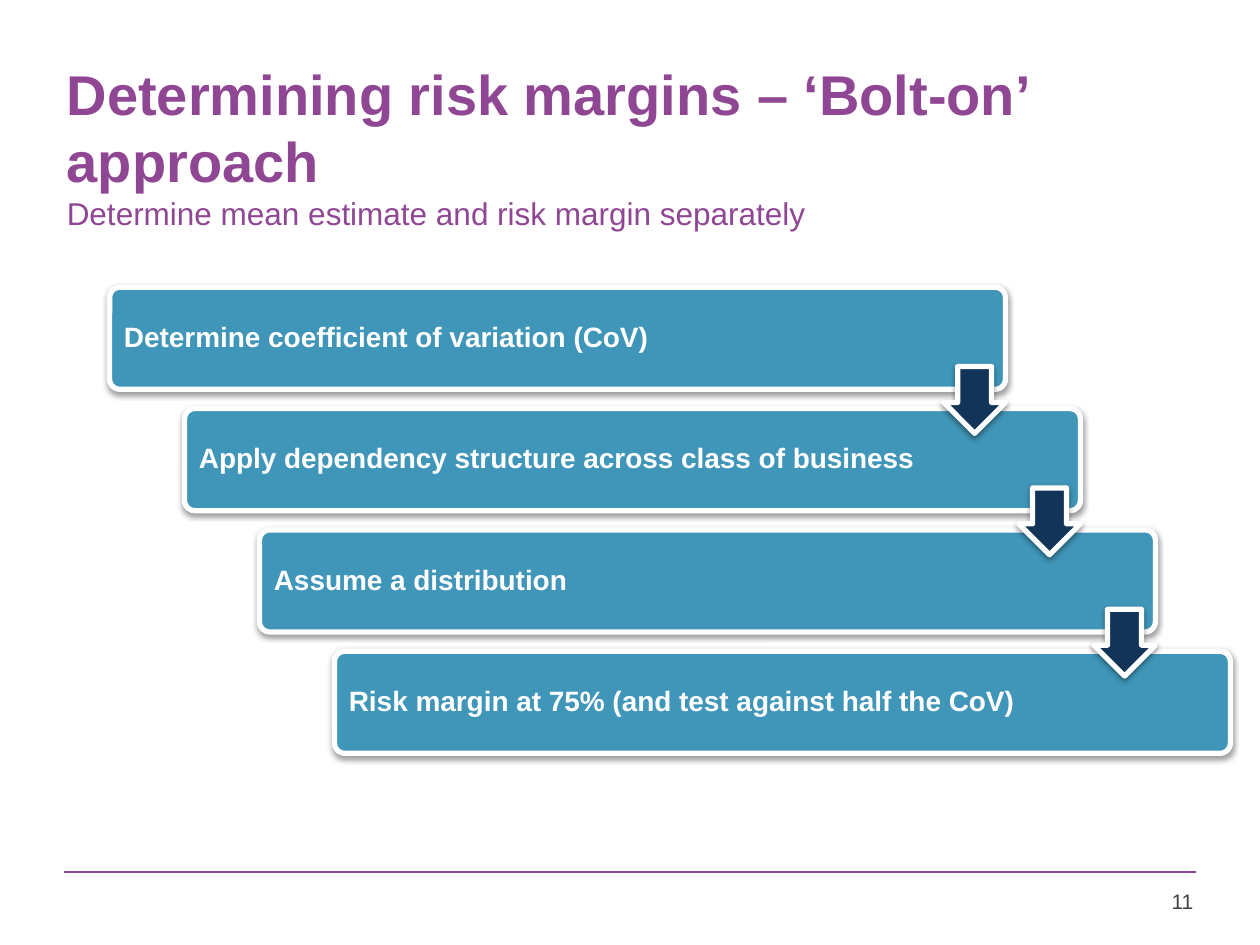
from dataclasses import dataclass

from lxml.etree import SubElement
from pptx import Presentation
from pptx.dml.color import RGBColor
from pptx.enum.shapes import MSO_CONNECTOR as Connector, MSO_SHAPE as Shape
from pptx.enum.text import MSO_ANCHOR as Anchor, MSO_AUTO_SIZE as AutoSize, PP_ALIGN as Align
from pptx.oxml.ns import qn
from pptx.util import Inches, Pt


@dataclass(frozen=True)
class Theme:
    """Colours, font and type sizes of the slide."""
    font: str = "Arial"
    accent: str = "8F4693"
    step: str = "4096B8"
    arrow: str = "113458"
    light: str = "FFFFFF"
    number: str = "3F4548"
    shadow: str = "000000"
    title_size: int = 32
    subtitle_size: int = 18
    step_size: int = 16
    number_size: int = 12


@dataclass(frozen=True)
class Staircase:
    """Grid of the descending steps, in inches."""
    left: float = 0.87
    top: float = 2.28
    column: float = 0.595
    row: float = 0.963
    width: float = 7.11
    height: float = 0.81
    arrow_width: float = 0.49
    arrow_height: float = 0.53
    arrow_drop: float = 0.63

    def corner(self, index):
        """Return the left and top of a step."""
        return self.left + index * self.column, self.top + index * self.row


THEME = Theme()
STAIRS = Staircase()
STEPS = (
    "Determine coefficient of variation (CoV)",
    "Apply dependency structure across class of business",
    "Assume a distribution",
    "Risk margin at 75% (and test against half the CoV)",
)


def rgb(colour):
    """Return a colour object for a hex code."""
    return RGBColor.from_string(colour)


def box(left, top, width, height):
    """Return a rectangle in slide units."""
    return [Inches(length) for length in (left, top, width, height)]


def style_font(font, size, colour, bold=False):
    """Set the theme font with a size, colour and weight."""
    font.name, font.size, font.bold = THEME.font, Pt(size), bold
    font.color.rgb = rgb(colour)


def add_title(slide, heading, subtitle):
    """Fill the title placeholder with a heading and a lighter subtitle."""
    title = slide.shapes.title
    title.left, title.top, title.width, title.height = box(0.43, 0.53, 9.07, 1.25)
    frame = title.text_frame
    frame.auto_size, frame.vertical_anchor = AutoSize.NONE, Anchor.MIDDLE
    paragraph = frame.paragraphs[0]
    paragraph.alignment = Align.LEFT
    heading_run = paragraph.add_run()
    heading_run.text = heading
    style_font(heading_run.font, THEME.title_size, THEME.accent, bold=True)
    paragraph.add_line_break()
    subtitle_run = paragraph.add_run()
    subtitle_run.text = subtitle
    style_font(subtitle_run.font, THEME.subtitle_size, THEME.accent)


def add_raised_shape(slide, preset, bounds, fill, adjustments):
    """Add a filled shape with a white outline and a soft shadow below."""
    shape = slide.shapes.add_shape(preset, *box(*bounds))
    for index, value in enumerate(adjustments):
        shape.adjustments[index] = value
    shape.fill.solid()
    shape.fill.fore_color.rgb = rgb(fill)
    shape.line.color.rgb = rgb(THEME.light)
    shape.line.width = Pt(3)
    shape.shadow.inherit = False
    effects = shape._element.spPr.find(qn("a:effectLst"))
    shadow = SubElement(effects, qn("a:outerShdw"), blurRad=str(Pt(3.1)),
                        dist=str(Pt(1.6)), dir="5400000", rotWithShape="0")
    colour = SubElement(shadow, qn("a:srgbClr"), val=THEME.shadow)
    SubElement(colour, qn("a:alpha"), val="38000")
    return shape


def add_step(slide, index, label):
    """Add one labelled step of the staircase."""
    bounds = (*STAIRS.corner(index), STAIRS.width, STAIRS.height)
    step = add_raised_shape(slide, Shape.ROUNDED_RECTANGLE, bounds, THEME.step, [0.1])
    frame = step.text_frame
    frame.word_wrap, frame.vertical_anchor = True, Anchor.MIDDLE
    frame.margin_left = frame.margin_top = frame.margin_bottom = Inches(0.09)
    frame.margin_right = Inches(0.99 if index == 0 else 1.26)
    paragraph = frame.paragraphs[0]
    paragraph.text, paragraph.alignment, paragraph.line_spacing = label, Align.LEFT, 0.9
    style_font(paragraph.font, THEME.step_size, THEME.light, bold=True)


def add_arrow(slide, index):
    """Add the arrow leading from a step down to the next."""
    left, top = STAIRS.corner(index)
    bounds = (left + STAIRS.width - STAIRS.arrow_width, top + STAIRS.arrow_drop,
              STAIRS.arrow_width, STAIRS.arrow_height)
    add_raised_shape(slide, Shape.DOWN_ARROW, bounds, THEME.arrow, [0.55, 0.5])


def add_footer(slide, number):
    """Add the footer rule and the page number."""
    rule = slide.shapes.add_connector(
        Connector.STRAIGHT, *box(0.51, 6.92, 9.49, 6.92))
    rule.line.color.rgb = rgb(THEME.accent)
    rule.line.width = Pt(1)
    SubElement(rule._element.spPr, qn("a:effectLst"))
    frame = slide.shapes.add_textbox(*box(8.86, 7, 0.71, 0.37)).text_frame
    frame.word_wrap = True
    paragraph = frame.paragraphs[0]
    paragraph.text, paragraph.alignment = number, Align.RIGHT
    style_font(paragraph.font, THEME.number_size, THEME.number)


def main():
    """Build and save the slide."""
    deck = Presentation()
    deck.slide_width, deck.slide_height = Inches(10), Inches(7.5)
    slide = deck.slides.add_slide(deck.slide_layouts.get_by_name("Title Only"))
    add_title(slide, "Determining risk margins – ‘Bolt-on’ approach",
              "Determine mean estimate and risk margin separately")
    add_footer(slide, "11")
    for index, label in enumerate(STEPS):
        add_step(slide, index, label)
        if index:
            add_arrow(slide, index - 1)
    deck.save("out.pptx")


if __name__ == "__main__":
    main()
